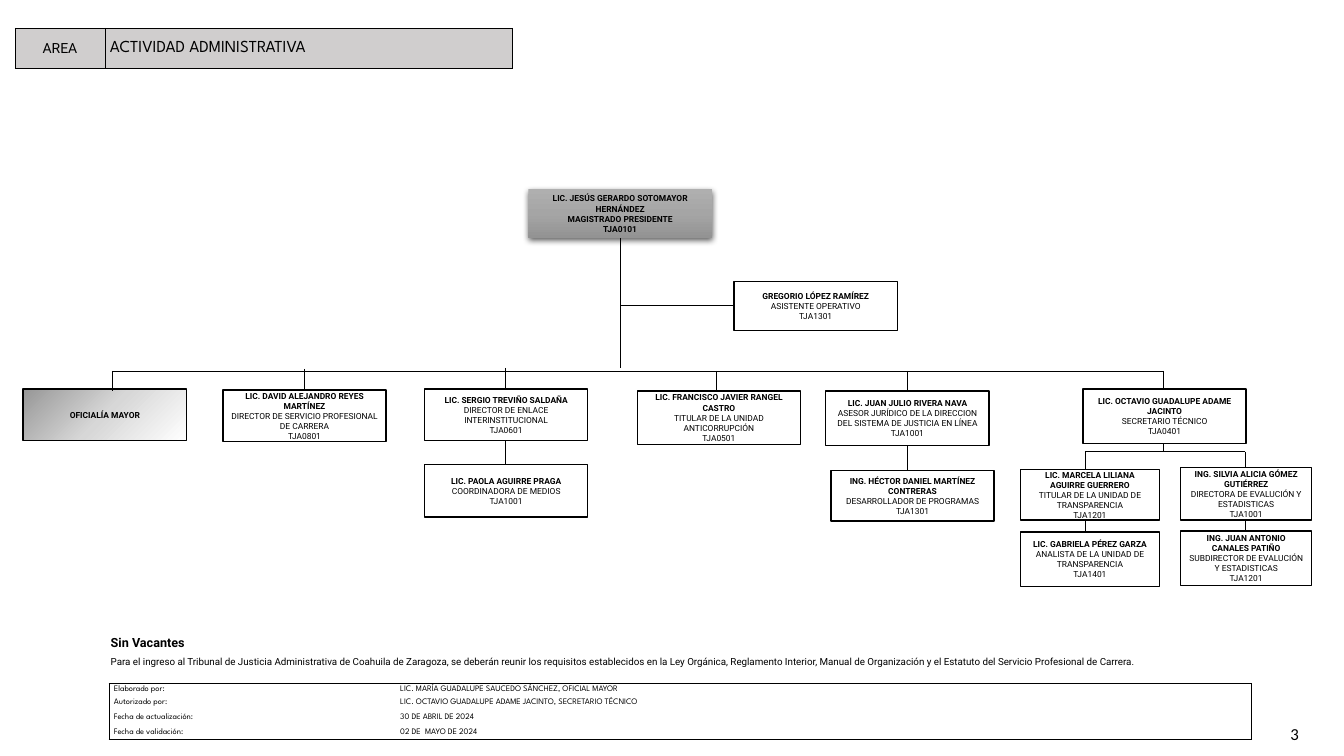
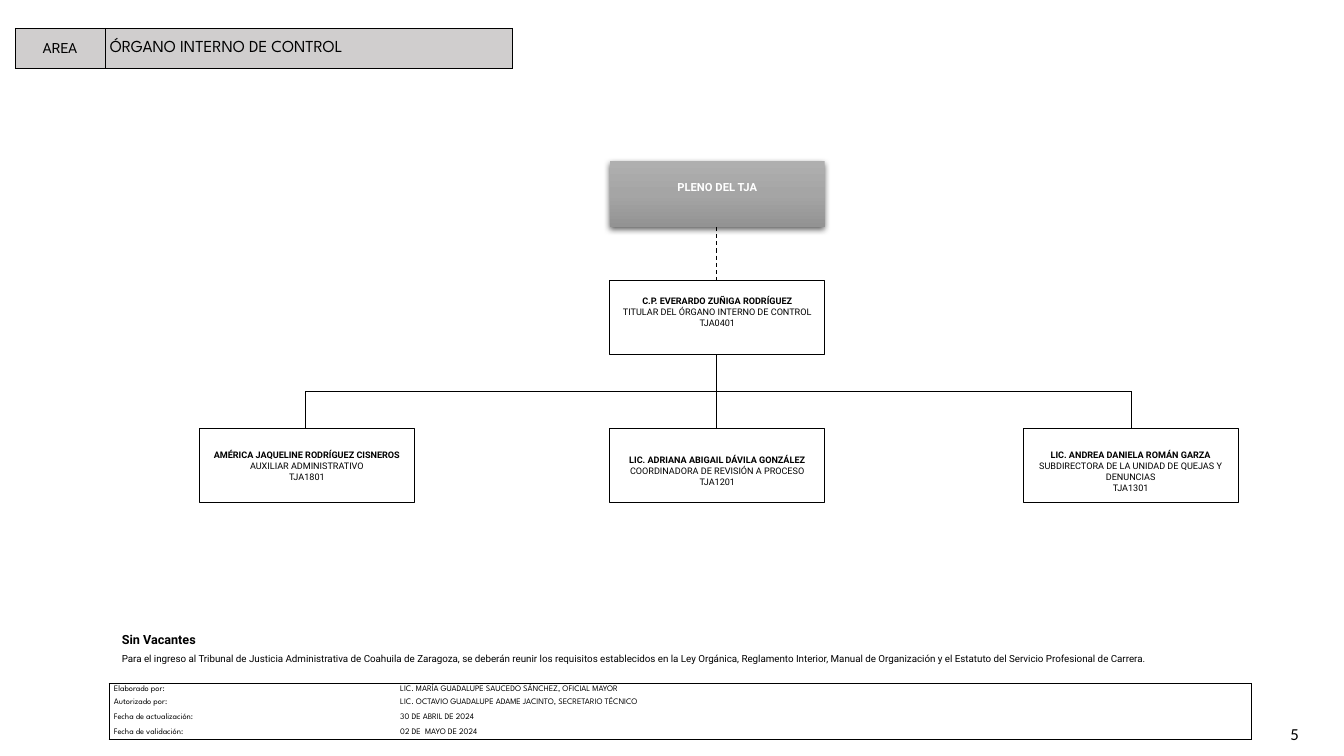
from copy import deepcopy
from dataclasses import dataclass

from lxml import etree
from pptx import Presentation
from pptx.dml.color import RGBColor
from pptx.enum.dml import MSO_LINE
from pptx.enum.shapes import MSO_CONNECTOR, MSO_SHAPE
from pptx.enum.text import MSO_ANCHOR as ANCHOR, PP_ALIGN as ALIGN
from pptx.oxml.ns import qn
from pptx.util import Inches, Pt


@dataclass(frozen=True)
class Theme:
    black: str = "000000"
    white: str = "FFFFFF"
    band: str = "D0CECE"
    head: tuple = ("AFAFAF", "A5A5A5", "939393")
    office: tuple = ("979797", "D7D7D7", "FFFFFF")
    body: str = "Roboto"
    title: str = "League Spartan"
    number: str = "Calibri"
    title_size: float = 12
    label_size: float = 10
    heading_size: float = 9
    note_size: float = 7
    small_size: float = 6
    staff_size: float = 6.5
    council_size: float = 8
    hairline: float = 0.5
    thin: float = 0.75
    outline: float = 1


T = Theme()
NO_STYLE = "{2D5ABB26-0587-4C30-8999-92F81FD0307C}"
NOTE = ("Para el ingreso al Tribunal de Justicia Administrativa de Coahuila de Zaragoza, "
        "se deberán reunir los requisitos establecidos en la Ley Orgánica, Reglamento "
        "Interior, Manual de Organización y el Estatuto del Servicio Profesional de Carrera.")
SIGN_OFF = [
    ("Elaborado por:", "LIC. MARÍA GUADALUPE SAUCEDO SÁNCHEZ, OFICIAL MAYOR", 0.12),
    ("Autorizado por:", "LIC. OCTAVIO GUADALUPE ADAME JACINTO, SECRETARIO TÉCNICO", 0.14),
    ("Fecha de actualización:", "30 DE ABRIL DE 2024", 0.16),
    ("Fecha de validación:", "02 DE  MAYO DE 2024", 0.14),
]


# Basic helpers
def rgb(color):
    return RGBColor.from_string(color)


def style(p, size, face=T.body, bold=False, color=T.black, align=ALIGN.LEFT):
    p.alignment = align
    f = p.font
    f.size, f.name, f.bold = Pt(size), face, bold
    f.color.rgb = rgb(color)


def gradient(sp, colors, angle):
    sp.fill.gradient()
    sp.fill.gradient_angle = angle
    stops = sp._element.spPr.find(".//" + qn("a:gsLst"))
    stops.insert(1, deepcopy(stops[0]))
    for i, (stop, color) in enumerate(zip(sp.fill.gradient_stops, colors)):
        stop.position = i / 2
        stop.color.rgb = rgb(color)


def drop_shadow(sp):
    effects = sp._element.spPr.find(qn("a:effectLst"))
    shadow = etree.SubElement(effects, qn("a:outerShdw"), blurRad=str(Pt(4.5)),
                              dist=str(Pt(1.5)), dir="5400000", rotWithShape="0")
    color = etree.SubElement(shadow, qn("a:srgbClr"), val=T.black)
    etree.SubElement(color, qn("a:alpha"), val="63000")


def wire(s, x1, y1, x2, y2, width=T.hairline, dash=False):
    ln = s.shapes.add_connector(MSO_CONNECTOR.STRAIGHT, Inches(x1), Inches(y1),
                                Inches(x2), Inches(y2))
    ln.line.color.rgb = rgb(T.black)
    ln.line.width = Pt(width)
    if dash:
        ln.line.dash_style = MSO_LINE.DASH
    etree.SubElement(ln._element.spPr, qn("a:effectLst"))


def box(s, x, y, w, h, lines, size=T.small_size, bold_lines=1, color=T.black,
        line=T.outline, fill=T.white, top=0.04, bottom=0.04):
    sp = s.shapes.add_shape(MSO_SHAPE.RECTANGLE, Inches(x), Inches(y), Inches(w), Inches(h))
    sp.shadow.inherit = False
    if fill:
        sp.fill.solid()
        sp.fill.fore_color.rgb = rgb(fill)
    else:
        sp.fill.background()
    if line:
        sp.line.color.rgb = rgb(T.black)
        sp.line.width = Pt(line)
    else:
        sp.line.fill.background()
    tf = sp.text_frame
    tf.word_wrap = True
    tf.vertical_anchor = ANCHOR.MIDDLE
    tf.margin_left = tf.margin_right = Inches(0.07)
    tf.margin_top, tf.margin_bottom = Inches(top), Inches(bottom)
    for i, text in enumerate(lines):
        p = tf.add_paragraph() if i else tf.paragraphs[0]
        p.text = text
        style(p, size, bold=i < bold_lines, color=color, align=ALIGN.CENTER)
    return sp


def head_box(s, x, y, w, h, lines, **options):
    sp = box(s, x, y, w, h, lines, bold_lines=len(lines), line=None, **options)
    gradient(sp, T.head, 270)
    drop_shadow(sp)


# Tables
def plain_table(s, x, y, cols, rows):
    table = s.shapes.add_table(len(rows), len(cols), Inches(x), Inches(y),
                               Inches(sum(cols)), Inches(sum(rows))).table
    table.first_row = table.horz_banding = False
    table._tbl.tblPr.find(qn("a:tableStyleId")).text = NO_STYLE
    for column, width in zip(table.columns, cols):
        column.width = Inches(width)
    for row, height in zip(table.rows, rows):
        row.height = Inches(height)
    return table


def finish_cell(cell, sides, fill=None):
    cell.vertical_anchor = ANCHOR.MIDDLE
    cell.margin_left = cell.margin_right = Inches(0.05)
    cell.margin_top = cell.margin_bottom = 0
    tcPr = cell._tc.get_or_add_tcPr()
    for side in sides:
        ln = etree.SubElement(tcPr, qn("a:ln" + side), w=str(Pt(T.hairline)))
        solid = etree.SubElement(ln, qn("a:solidFill"))
        etree.SubElement(solid, qn("a:srgbClr"), val=T.black)
    if fill:
        cell.fill.solid()
        cell.fill.fore_color.rgb = rgb(fill)
    else:
        cell.fill.background()


def area_band(s, x, y, area):
    table = plain_table(s, x, y, [0.89, 4.04], [0.4])
    label, name = table.cell(0, 0), table.cell(0, 1)
    label.text, name.text = "AREA", area
    style(label.text_frame.paragraphs[0], T.label_size, align=ALIGN.CENTER)
    style(name.text_frame.paragraphs[0], T.title_size, T.title)
    for cell in (label, name):
        finish_cell(cell, "LRTB", T.band)


def sign_off_table(s, x, y):
    table = plain_table(s, x, y, [2.84, 8.49], [row[2] for row in SIGN_OFF])
    last = len(SIGN_OFF) - 1
    for i, row in enumerate(SIGN_OFF):
        for j, side in enumerate("LR"):
            cell = table.cell(i, j)
            cell.text = row[j]
            style(cell.text_frame.paragraphs[0], T.small_size, T.title)
            finish_cell(cell, side + "T" * (i == 0) + "B" * (i == last))


# Text regions
def text_box(s, x, y, w, h):
    tf = s.shapes.add_textbox(Inches(x), Inches(y), Inches(w), Inches(h)).text_frame
    tf.word_wrap = True
    return tf


def vacancy_note(s, x, y):
    tf = text_box(s, x, y, 11.33, 0.41)
    p = tf.paragraphs[0]
    p.text = "Sin Vacantes"
    style(p, T.heading_size, bold=True)
    p = tf.add_paragraph()
    p.text = NOTE
    p.line_spacing = 1.5
    style(p, T.note_size)


def page_number(s, x, y, number):
    tf = text_box(s, x, y, 1.52, 0.4)
    tf.vertical_anchor = ANCHOR.MIDDLE
    p = tf.paragraphs[0]
    p.text = str(number)
    style(p, T.title_size, T.number, align=ALIGN.RIGHT)


def base_slide(prs, area, number, note_x, note_y):
    s = prs.slides.add_slide(prs.slide_layouts[6])
    area_band(s, 0.15, 0.28, area)
    vacancy_note(s, note_x, note_y)
    sign_off_table(s, 1.08, 6.78)
    page_number(s, 11.46, 7.08, number)
    return s


# Administrative activity chart
def administrative_slide(prs):
    s = base_slide(prs, "ACTIVIDAD ADMINISTRATIVA", 3, 1, 6.25)
    trunk, bus, fork = 6.15, 3.68, 4.48
    left, right = 1.11, 11.54

    # Trunk, assistant branch and bus
    wire(s, trunk, 2.36, trunk, 3.65)
    wire(s, trunk, 3.03, 7.28, 3.03)
    wire(s, left, bus, right, bus)
    for x, top, bottom in ((3.02, 3.66, 3.87), (5.01, 3.65, 4.61), (7.1, bus, 3.88),
                           (9, bus, 4.67), (right, bus, fork)):
        wire(s, x, top, x, bottom)

    # Fork under the technical secretary
    wire(s, 10.76, fork, 12.35, fork)
    for x in (10.76, 12.35):
        wire(s, x, fork, x, 5.28)

    # Head and office
    head_box(s, 5.24, 1.88, 1.82, 0.48,
             ["LIC. JESÚS GERARDO SOTOMAYOR HERNÁNDEZ", "MAGISTRADO PRESIDENTE", "TJA0101"])
    gradient(box(s, 0.23, 3.86, 1.62, 0.51, ["OFICIALÍA MAYOR"]), T.office, 315)
    wire(s, left, bus, left, 3.88)

    # Staff
    staff = [
        (7.28, 2.79, 1.62, 0.49, "GREGORIO LÓPEZ RAMÍREZ", "ASISTENTE OPERATIVO", "TJA1301"),
        (2.21, 3.87, 1.62, 0.51, "LIC. DAVID ALEJANDRO REYES MARTÍNEZ",
         "DIRECTOR DE SERVICIO PROFESIONAL DE CARRERA", "TJA0801"),
        (4.21, 3.86, 1.62, 0.51, "LIC. SERGIO TREVIÑO SALDAÑA",
         "DIRECTOR DE ENLACE INTERINSTITUCIONAL", "TJA0601"),
        (4.21, 4.61, 1.62, 0.52, "LIC. PAOLA AGUIRRE PRAGA", "COORDINADORA DE MEDIOS",
         "TJA1001"),
        (6.32, 3.88, 1.62, 0.53, "LIC. FRANCISCO JAVIER RANGEL CASTRO",
         "TITULAR DE LA UNIDAD ANTICORRUPCIÓN", "TJA0501"),
        (8.19, 3.88, 1.62, 0.54, "LIC. JUAN JULIO RIVERA NAVA",
         "ASESOR JURÍDICO DE LA DIRECCION DEL SISTEMA DE JUSTICIA EN LÍNEA", "TJA1001"),
        (8.24, 4.67, 1.62, 0.5, "ING. HÉCTOR DANIEL MARTÍNEZ CONTRERAS",
         "DESARROLLADOR DE PROGRAMAS TJA1301"),
        (10.74, 3.86, 1.62, 0.54, "LIC. OCTAVIO GUADALUPE ADAME JACINTO",
         "SECRETARIO TÉCNICO", "TJA0401"),
        (10.12, 4.66, 1.38, 0.5, "LIC. MARCELA LILIANA AGUIRRE GUERRERO",
         "TITULAR DE LA UNIDAD DE TRANSPARENCIA", "TJA1201"),
        (11.71, 4.64, 1.3, 0.52, "ING. SILVIA ALICIA GÓMEZ GUTIÉRREZ",
         "DIRECTORA DE EVALUCIÓN Y ESTADISTICAS", "TJA1001"),
        (10.12, 5.28, 1.38, 0.54, "LIC. GABRIELA PÉREZ GARZA",
         "ANALISTA DE LA UNIDAD DE TRANSPARENCIA", "TJA1401"),
        (11.71, 5.27, 1.3, 0.54, "ING. JUAN ANTONIO CANALES PATIÑO",
         "SUBDIRECTOR DE EVALUCIÓN Y ESTADISTICAS", "TJA1201"),
    ]
    for x, y, w, h, *lines in staff:
        box(s, x, y, w, h, lines)


# Internal control chart
def control_slide(prs):
    s = base_slide(prs, "ÓRGANO INTERNO DE CONTROL", 5, 1.11, 6.22)
    w, h, x, bus, row = 2.13, 0.74, 6.05, 3.88, 4.25
    center, ends = 7.11, (3.03, 11.22)

    # Connectors
    wire(s, center, 2.25, center, 2.78, T.thin, dash=True)
    wire(s, center, 2.78 + h, center, row)
    wire(s, ends[0], bus, ends[1], bus)
    for end in ends:
        wire(s, end, bus, end, row)

    # Council and staff; uneven margins shift the text within its box
    head_box(s, x, 1.6, w, 0.65, ["PLENO DEL TJA"], size=T.council_size, color=T.white,
             bottom=0.17)
    staff = [
        (x, 2.78, 0.04, 0.15, "C.P. EVERARDO ZUÑIGA RODRÍGUEZ",
         "TITULAR DEL ÓRGANO INTERNO DE CONTROL", "TJA0401"),
        (1.98, row, 0.04, 0.04, "AMÉRICA JAQUELINE RODRÍGUEZ CISNEROS",
         "AUXILIAR ADMINISTRATIVO", "TJA1801"),
        (x, row, 0.15, 0.04, "LIC. ADRIANA ABIGAIL DÁVILA GONZÁLEZ",
         "COORDINADORA DE REVISIÓN A PROCESO TJA1201"),
        (10.15, row, 0.15, 0.04, "LIC. ANDREA DANIELA ROMÁN GARZA",
         "SUBDIRECTORA DE LA UNIDAD DE QUEJAS Y DENUNCIAS", "TJA1301"),
    ]
    for left, y, top, bottom, *lines in staff:
        box(s, left, y, w, h, lines, T.staff_size, line=T.thin, fill=None,
            top=top, bottom=bottom)


def main():
    prs = Presentation()
    prs.slide_width, prs.slide_height = Inches(13.33), Inches(7.5)
    administrative_slide(prs)
    control_slide(prs)
    prs.save("out.pptx")


if __name__ == "__main__":
    main()
